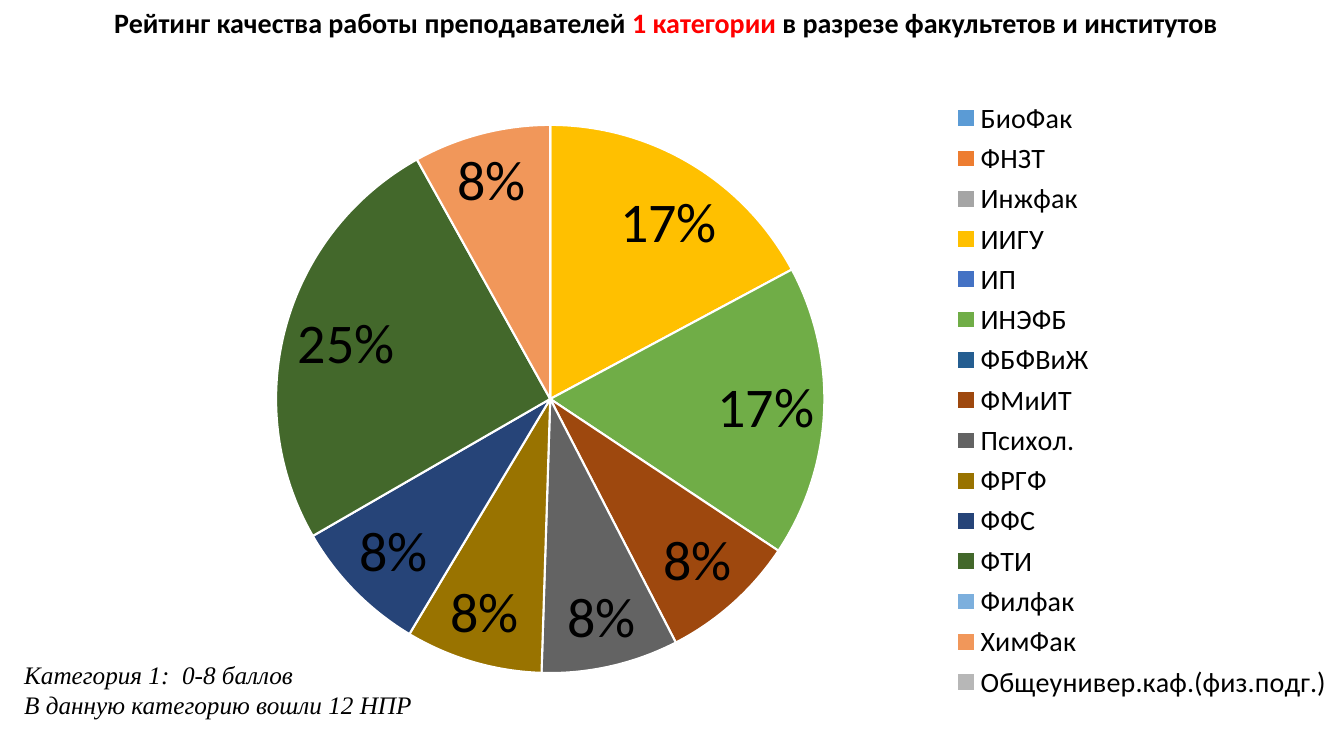
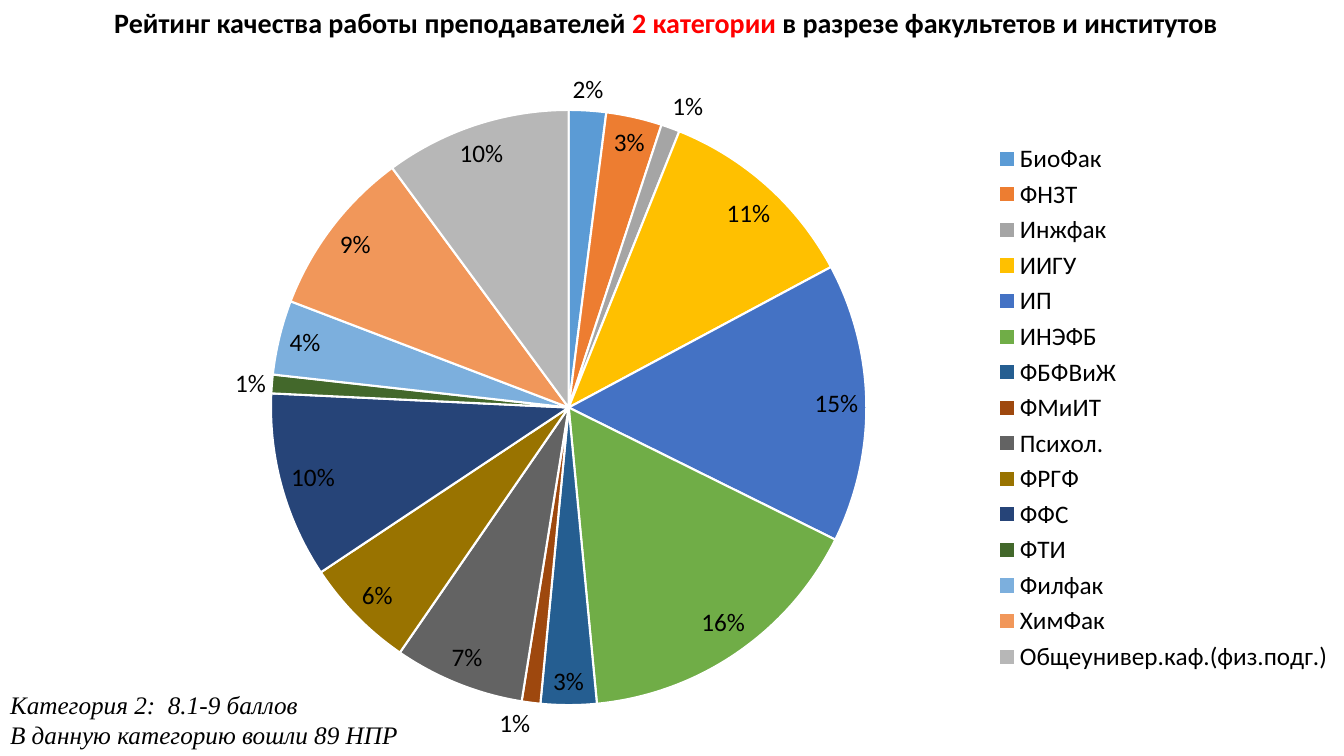
"""Build two slides with pie charts that rate teaching quality by faculty."""
from dataclasses import dataclass
from typing import Any, Optional

from lxml.etree import SubElement
from pptx import Presentation
from pptx.chart.data import CategoryChartData
from pptx.dml.color import RGBColor
from pptx.enum.chart import XL_CHART_TYPE as ChartType
from pptx.enum.chart import XL_LABEL_POSITION as LabelPosition
from pptx.enum.chart import XL_LEGEND_POSITION as LegendPosition
from pptx.enum.text import MSO_ANCHOR as Anchor
from pptx.enum.text import MSO_AUTO_SIZE as AutoSize
from pptx.enum.text import PP_ALIGN as Align
from pptx.oxml import parse_xml
from pptx.oxml.ns import nsdecls, qn
from pptx.util import Inches, Pt

SLIDE_WIDTH, SLIDE_HEIGHT = Inches(13.33), Inches(7.5)
BLACK = RGBColor(0x00, 0x00, 0x00)
RED = RGBColor(0xFF, 0x00, 0x00)
WHITE = RGBColor(0xFF, 0xFF, 0xFF)

FACULTIES = {
    "БиоФак": RGBColor(0x5B, 0x9B, 0xD5),
    "ФНЗТ": RGBColor(0xED, 0x7D, 0x31),
    "Инжфак": RGBColor(0xA5, 0xA5, 0xA5),
    "ИИГУ": RGBColor(0xFF, 0xC0, 0x00),
    "ИП": RGBColor(0x44, 0x72, 0xC4),
    "ИНЭФБ": RGBColor(0x70, 0xAD, 0x47),
    "ФБФВиЖ": RGBColor(0x25, 0x5E, 0x91),
    "ФМиИТ": RGBColor(0x9E, 0x48, 0x0E),
    "Психол.": RGBColor(0x63, 0x63, 0x63),
    "ФРГФ": RGBColor(0x99, 0x73, 0x00),
    "ФФС": RGBColor(0x26, 0x44, 0x78),
    "ФТИ": RGBColor(0x43, 0x68, 0x2B),
    "Филфак": RGBColor(0x7C, 0xAF, 0xDD),
    "ХимФак": RGBColor(0xF1, 0x97, 0x5A),
    "Общеунивер.каф.(физ.подг.)": RGBColor(0xB7, 0xB7, 0xB7),
}

TITLE_FONT = {"name": "Calibri", "size": Pt(20), "bold": True}
NOTE_FONT = {"name": "Times New Roman", "size": Pt(18), "italic": True}


@dataclass(frozen=True)
class Area:
    """Hold a rectangle in percent of the slide's width and height."""
    left: float
    top: float
    width: float
    height: float

    def place(self) -> dict[str, int]:
        return {
            "left": int(SLIDE_WIDTH * self.left / 100),
            "top": int(SLIDE_HEIGHT * self.top / 100),
            "width": int(SLIDE_WIDTH * self.width / 100),
            "height": int(SLIDE_HEIGHT * self.height / 100),
        }

    def shares_of(self, outer: "Area") -> dict[str, float]:
        return {
            "x": (self.left - outer.left) / outer.width,
            "y": (self.top - outer.top) / outer.height,
            "w": self.width / outer.width,
            "h": self.height / outer.height,
        }


def to_bottom(left: float, top: float, width: float) -> Area:
    """Return an area that reaches the bottom of the slide."""
    return Area(left, top, width, 100 - top)


def round_area(left: float, top: float, width: float) -> Area:
    """Return an area that is square on the slide."""
    return Area(left, top, width, width * SLIDE_WIDTH / SLIDE_HEIGHT)


@dataclass(frozen=True)
class Rating:
    """Describe one category of teachers and its chart."""
    category: int
    points: str
    teachers: int
    values: tuple[Optional[int], ...]
    label_size: int
    legend_size: int
    note_area: Area
    chart_area: Area
    pie_area: Area


TITLE_AREA = Area(0, 0, 99.1, 5.87)
RATINGS = (
    Rating(1, "0-8", 12,
           (None, None, None, 17, None, 17, None, 8, 8, 8, 8, 25, None, 8, None),
           40, 20, to_bottom(1.05, 86.53, 30.68),
           to_bottom(12.75, 5.87, 87.25), round_area(20.54, 16.53, 40.8)),
    Rating(2, "8.1-9", 89,
           (2, 3, 1, 11, 15, 16, 3, 1, 7, 6, 10, 1, 4, 9, 10),
           18, 18, to_bottom(0, 90.53, 30.68),
           to_bottom(8.2, 7.87, 91.8), round_area(20.16, 14.55, 44.3)),
)


def apply(target: Any, formats: dict[str, Any]) -> None:
    """Set every attribute listed in the formats."""
    for name, value in formats.items():
        setattr(target, name, value)


def add_run(paragraph: Any, text: str, formats: dict[str, Any], color: RGBColor) -> None:
    """Append one formatted run."""
    run = paragraph.add_run()
    run.text = text
    apply(run.font, formats)
    run.font.color.rgb = color


def fill_title(title: Any, rating: Rating) -> None:
    """Write the title with its category in red."""
    apply(title, TITLE_AREA.place())
    apply(title.text_frame, {"auto_size": AutoSize.NONE, "vertical_anchor": Anchor.TOP,
                             "word_wrap": True})
    paragraph = title.text_frame.paragraphs[0]
    apply(paragraph, {"alignment": Align.CENTER, "space_before": Pt(6)})
    for text, color in (("Рейтинг качества работы преподавателей ", BLACK),
                        (f"{rating.category} категории ", RED),
                        ("в разрезе факультетов и институтов", BLACK)):
        add_run(paragraph, text, TITLE_FONT, color)


def fill_note(note: Any, rating: Rating) -> None:
    """Write the two lines that explain the category."""
    apply(note, rating.note_area.place())
    frame = note.text_frame
    apply(frame, {"auto_size": AutoSize.NONE, "vertical_anchor": Anchor.TOP,
                  "word_wrap": False})
    lines = (f"Категория {rating.category}:  {rating.points} баллов",
             f"В данную категорию вошли {rating.teachers} НПР")
    for index, line in enumerate(lines):
        paragraph = frame.add_paragraph() if index else frame.paragraphs[0]
        apply(paragraph, {"alignment": Align.LEFT, "space_before": Pt(0)})
        properties = paragraph._p.get_or_add_pPr()
        properties.set("marL", "0")
        properties.set("indent", "0")
        SubElement(properties, qn("a:buNone"))
        add_run(paragraph, line, NOTE_FONT, BLACK)


def set_chart_font(font: Any, size: int) -> None:
    """Give chart text its font, size and colour."""
    apply(font, {"name": "Calibri", "size": Pt(size)})
    font.color.rgb = BLACK


def set_pie_layout(chart: Any, rating: Rating) -> None:
    """Fix the pie inside the chart and make the chart's background clear."""
    plot_area = chart._chartSpace.chart.plotArea
    for old_layout in plot_area.findall(qn("c:layout")):
        plot_area.remove(old_layout)
    shares = rating.pie_area.shares_of(rating.chart_area)
    settings = {"layoutTarget": "inner", "xMode": "edge", "yMode": "edge",
                **{name: f"{share:.4f}" for name, share in shares.items()}}
    items = "".join(f'<c:{name} val="{value}"/>' for name, value in settings.items())
    plot_area.insert(0, parse_xml(
        f'<c:layout {nsdecls("c")}><c:manualLayout>{items}</c:manualLayout></c:layout>'))
    chart._chartSpace.chart.addnext(parse_xml(
        f'<c:spPr {nsdecls("c", "a")}><a:noFill/><a:ln><a:noFill/></a:ln></c:spPr>'))


def add_pie(slide: Any, rating: Rating) -> None:
    """Add the pie chart with percent labels and a legend."""
    data = CategoryChartData()
    data.categories = list(FACULTIES)
    data.add_series("Series 1", rating.values)
    position = rating.chart_area.place()
    chart = slide.shapes.add_chart(ChartType.PIE, position["left"], position["top"],
                                   position["width"], position["height"], data).chart
    apply(chart, {"has_title": False, "has_legend": True})
    set_chart_font(chart.font, 10)
    apply(chart.legend, {"position": LegendPosition.RIGHT, "include_in_layout": False})
    set_chart_font(chart.legend.font, rating.legend_size)

    plot = chart.plots[0]
    plot.vary_by_categories = True
    series = plot.series[0]
    for index, color in enumerate(FACULTIES.values()):
        sector = series.points[index].format
        sector.fill.solid()
        sector.fill.fore_color.rgb = color
        sector.line.color.rgb = WHITE
        sector.line.width = Pt(1.5)
    labels = series.data_labels
    apply(labels, {"show_value": False, "show_percentage": True, "number_format": "0%",
                   "number_format_is_linked": False, "position": LabelPosition.BEST_FIT})
    set_chart_font(labels.font, rating.label_size)
    set_pie_layout(chart, rating)


def main() -> None:
    """Build and save the presentation."""
    presentation = Presentation()
    apply(presentation, {"slide_width": SLIDE_WIDTH, "slide_height": SLIDE_HEIGHT})
    for rating in RATINGS:
        slide = presentation.slides.add_slide(presentation.slide_layouts[1])
        fill_title(slide.shapes.title, rating)
        fill_note(slide.placeholders[1], rating)
        add_pie(slide, rating)
    presentation.save("out.pptx")


if __name__ == "__main__":
    main()
